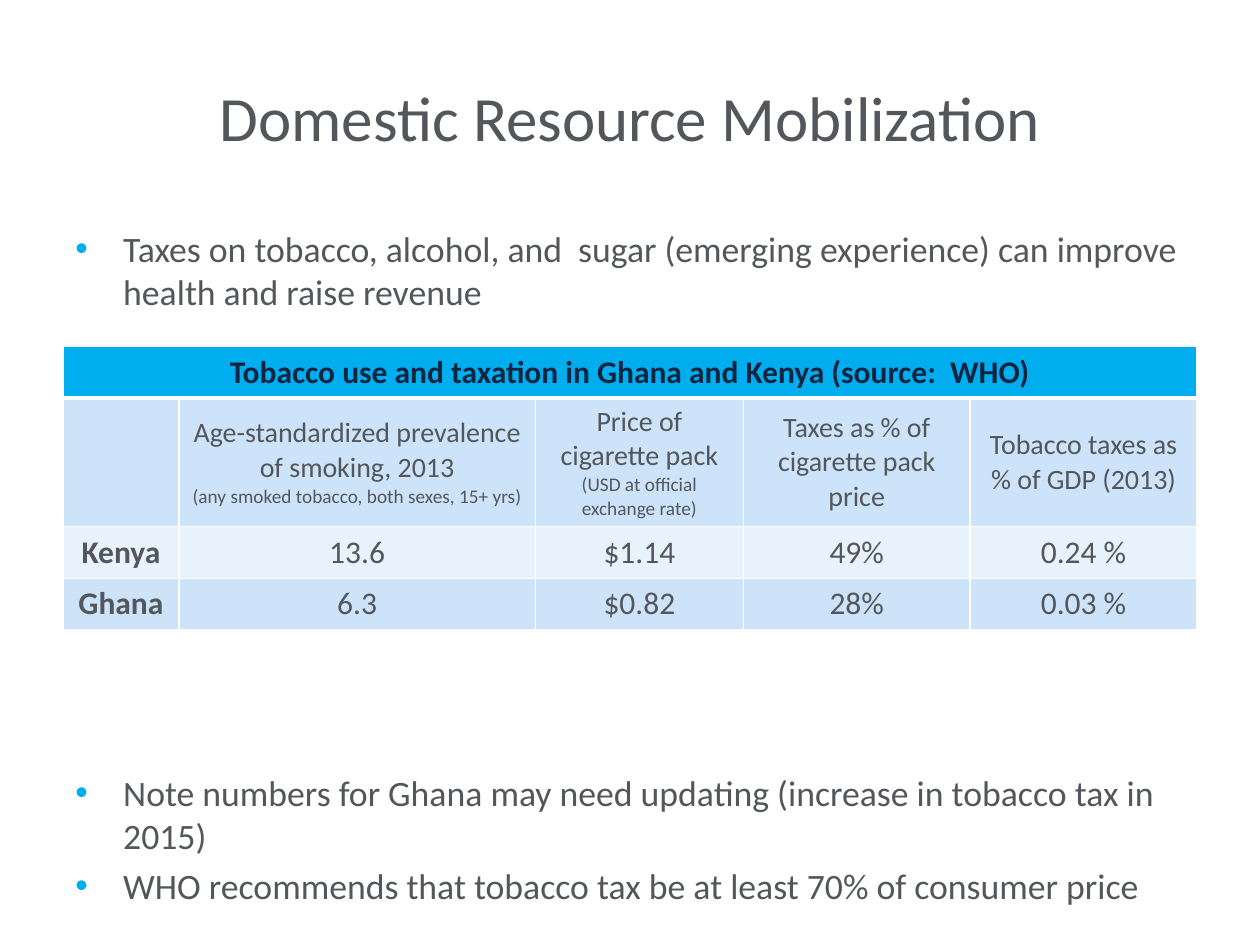
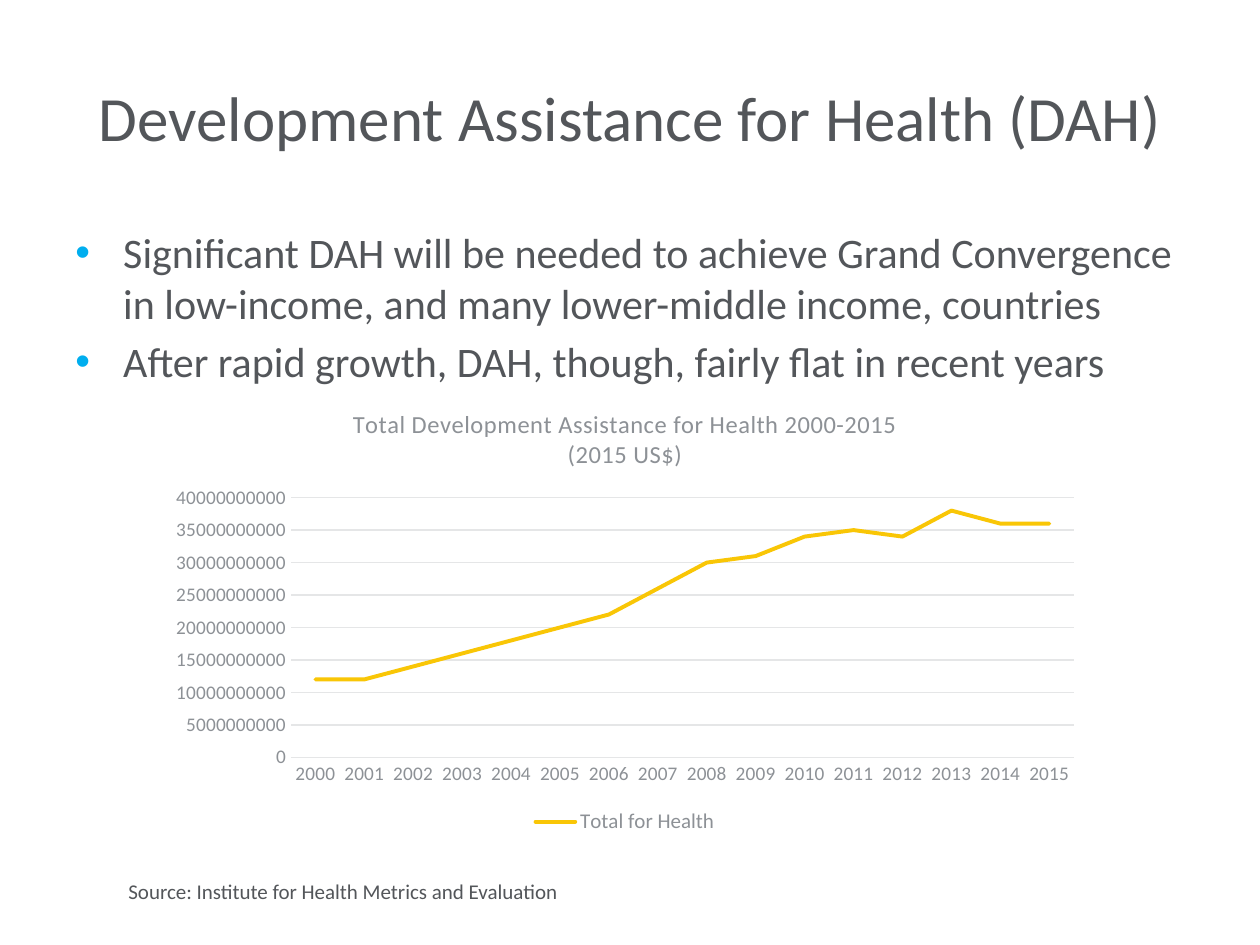
import pptx
import pptx.chart.data
import pptx.dml.color
import pptx.enum.chart
import pptx.enum.text
import pptx.oxml
import pptx.oxml.ns
import pptx.util
from lxml import etree

Inches, Pt = pptx.util.Inches, pptx.util.Pt
ANCHOR, ALIGN = pptx.enum.text.MSO_ANCHOR, pptx.enum.text.PP_ALIGN
qn = pptx.oxml.ns.qn

FONT = "Calibri"
COLORS = {
    "text": "53565A", "accent": "00AEEF", "header": "0F243E",
    "band": "CCE3F9", "band_light": "E7F2FC", "white": "FFFFFF",
    "muted": "8D9196", "grid": "E5E6E7", "series": "F9C606",
}


def rgb(name):
    return pptx.dml.color.RGBColor.from_string(COLORS[name])


class Deck:
    def __init__(self):
        self.prs = pptx.Presentation()
        self.prs.slide_width, self.prs.slide_height = Inches(10), Inches(7.5)
        self.slide = None

    def style(self, font, size, color="text", bold=False):
        font.name, font.size, font.bold = FONT, Pt(size), bold
        font.color.rgb = rgb(color)

    def run(self, p, text, size, color="text", bold=False):
        r = p.add_run()
        r.text = text
        self.style(r.font, size, color, bold)
        return r

    def box(self, x, y, w, h):
        sp = self.slide.shapes.add_textbox(Inches(x), Inches(y), Inches(w), Inches(h))
        sp.text_frame.word_wrap = True
        return sp.text_frame

    def new_slide(self, title):
        self.slide = self.prs.slides.add_slide(self.prs.slide_layouts[6])
        tf = self.box(0.5, 0.3, 9, 1.25)
        tf.vertical_anchor = ANCHOR.MIDDLE
        p = tf.paragraphs[0]
        p.alignment = ALIGN.CENTER
        self.run(p, title, 36)

    def bullets(self, y, h, items, size):
        tf = self.box(0.5, y, 9, h)
        for i, item in enumerate(items):
            p = tf.add_paragraph() if i else tf.paragraphs[0]
            pPr = p._p.get_or_add_pPr()
            pPr.set("marL", str(Inches(0.38)))
            pPr.set("indent", str(-Inches(0.38)))
            clr = etree.SubElement(pPr, qn("a:buClr"))
            etree.SubElement(clr, qn("a:srgbClr"), val=COLORS["accent"])
            etree.SubElement(pPr, qn("a:buFont"), typeface="Arial")
            etree.SubElement(pPr, qn("a:buChar"), char="•")
            if i:
                p.space_before = Pt(size * 0.2)
            self.run(p, item, size)

    def note(self, x, y, w, h, text):
        self.run(self.box(x, y, w, h).paragraphs[0], text, 12)

    def borders(self, cell, top=1, bottom=1):
        """White borders; call before the fill, which must follow them in the XML."""
        tcPr = cell._tc.get_or_add_tcPr()
        for side, width in (("L", 1), ("R", 1), ("T", top), ("B", bottom)):
            ln = etree.SubElement(tcPr, qn("a:ln" + side), w=str(Pt(width)))
            fill = etree.SubElement(ln, qn("a:solidFill"))
            etree.SubElement(fill, qn("a:srgbClr"), val=COLORS["white"])

    def cell(self, cell, lines, fill, bold=False, color="text", top=1, bottom=1):
        """Fill a cell; lines holds (text, size) pairs, one for each paragraph."""
        self.borders(cell, top, bottom)
        cell.fill.solid()
        cell.fill.fore_color.rgb = rgb(fill)
        cell.vertical_anchor = ANCHOR.MIDDLE
        for i, (text, size) in enumerate(lines):
            tf = cell.text_frame
            p = tf.add_paragraph() if i else tf.paragraphs[0]
            p.alignment = ALIGN.CENTER
            self.run(p, text, size, color, bold)

    def table(self, x, y, widths, heights, title, heads, rows):
        frame = self.slide.shapes.add_table(
            len(heights), len(widths), Inches(x), Inches(y),
            Inches(sum(widths)), Inches(sum(heights)))
        tbl = frame.table
        for col, w in zip(tbl.columns, widths):
            col.width = Inches(w)
        for row, h in zip(tbl.rows, heights):
            row.height = Inches(h)
        tbl.cell(0, 0).merge(tbl.cell(0, len(widths) - 1))
        for c, lines in enumerate(heads):
            self.cell(tbl.cell(0, c), [] if c else [(title, 18)], "accent",
                      bold=True, color="header", bottom=3)
            self.cell(tbl.cell(1, c), lines, "band", top=3)
        for r, values in enumerate(rows):
            for c, value in enumerate(values):
                self.cell(tbl.cell(r + 2, c), [(value, 18)],
                          "band" if r % 2 else "band_light", bold=c == 0)

    def line_chart(self, x, y, w, h, title, cats, name, values):
        data = pptx.chart.data.CategoryChartData()
        data.categories = cats
        data.add_series(name, values)
        chart = self.slide.shapes.add_chart(
            pptx.enum.chart.XL_CHART_TYPE.LINE,
            Inches(x), Inches(y), Inches(w), Inches(h), data).chart
        self.style(chart.font, 10)

        tf = chart.chart_title.text_frame
        chart.chart_title.include_in_layout = False
        for i, text in enumerate(title):
            p = tf.add_paragraph() if i else tf.paragraphs[0]
            r = self.run(p, text, 14, "muted")
            r._r.get_or_add_rPr().set("spc", "20")

        chart.has_legend = True
        chart.legend.position = pptx.enum.chart.XL_LEGEND_POSITION.BOTTOM
        chart.legend.include_in_layout = False
        self.style(chart.legend.font, 12, "muted")

        val, cat = chart.value_axis, chart.category_axis
        for axis in (val, cat):
            axis.major_tick_mark = pptx.enum.chart.XL_TICK_MARK.NONE
            axis.minor_tick_mark = pptx.enum.chart.XL_TICK_MARK.NONE
            self.style(axis.tick_labels.font, 11, "muted")
        val.minimum_scale, val.maximum_scale, val.major_unit = 0, 40e9, 5e9
        val.tick_labels.number_format = "0"
        val.tick_labels.number_format_is_linked = False
        val.format.line.fill.background()
        for line in (val.major_gridlines.format.line, cat.format.line):
            line.color.rgb = rgb("grid")
            line.width = Pt(0.75)

        chart.plots[0].vary_by_categories = False
        series = chart.plots[0].series[0]
        series.smooth = False
        series.marker.style = pptx.enum.chart.XL_MARKER_STYLE.NONE
        series.format.line.color.rgb = rgb("series")
        series.format.line.width = Pt(2.25)
        series.format.line._get_or_add_ln().set("cap", "rnd")


def tobacco_slide(deck):
    deck.new_slide("Domestic Resource Mobilization")
    deck.bullets(1.75, 0.8, [
        "Taxes on tobacco, alcohol, and  sugar (emerging experience) can improve "
        "health and raise revenue"], 20.4)
    deck.table(
        0.5, 2.75, [0.92, 2.83, 1.65, 1.8, 1.8], [0.41, 1.02, 0.41, 0.41],
        "Tobacco use and taxation in Ghana and Kenya (source:  WHO)",
        [[],
         [("Age-standardized prevalence of smoking, 2013", 16),
          ("(any smoked tobacco, both sexes, 15+ yrs)", 11)],
         [("Price of cigarette pack", 16), ("(USD at official exchange rate)", 11)],
         [("Taxes as % of cigarette pack price", 16)],
         [("Tobacco taxes as % of GDP (2013)", 16)]],
        [["Kenya", "13.6", "$1.14", "49%", "0.24 %"],
         ["Ghana", "6.3", "$0.82", "28%", "0.03 %"]])
    deck.bullets(6.07, 1.2, [
        "Note numbers for Ghana may need updating (increase in tobacco tax in 2015)",
        "WHO recommends that tobacco tax be at least 70% of consumer price"], 20.4)


def assistance_slide(deck):
    deck.new_slide("Development Assistance for Health (DAH)")
    deck.bullets(1.75, 1.5, [
        "Significant DAH will be needed to achieve Grand Convergence in low-income, "
        "and many lower-middle income, countries",
        "After rapid growth, DAH, though, fairly flat in recent years"], 24)
    billions = [12, 12, 14, 16, 18, 20, 22, 26, 30, 31, 34, 35, 34, 38, 36, 36]
    deck.line_chart(
        1.25, 3.08, 7.42, 3.58,
        ["Total Development Assistance for Health 2000-2015", "(2015 US$)"],
        [str(year) for year in range(2000, 2016)],
        "Total for Health", [b * 10**9 for b in billions])
    deck.note(0.92, 6.92, 3.92, 0.3,
              "Source: Institute for Health Metrics and Evaluation")


def main():
    deck = Deck()
    tobacco_slide(deck)
    assistance_slide(deck)
    deck.prs.save("out.pptx")


if __name__ == "__main__":
    main()
